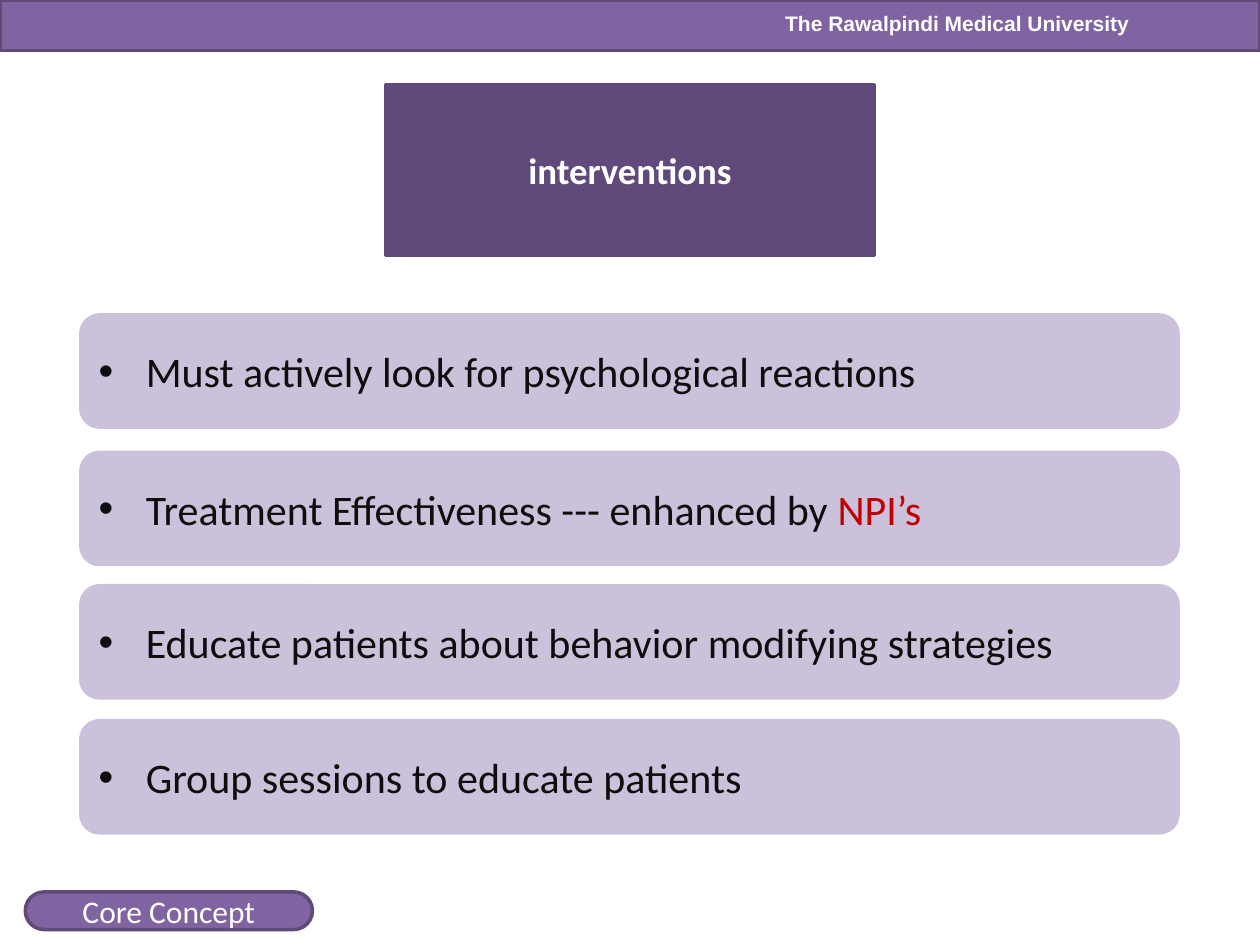
from lxml import etree
from pptx import Presentation
from pptx.dml.color import RGBColor
from pptx.enum import shapes, text
from pptx.oxml import ns
from pptx.util import Cm, Pt

HUES = {
    "bar": "8064A2",
    "edge": "5F4A78",
    "oval": "604A7B",
    "card": "CCC1DA",
    "ink": "0D0D0D",
    "red": "C00000",
    "white": "FFFFFF",
}
CARDS = [
    (6.35, [("Must actively look for psychological reactions", "ink")]),
    (9.12, [("Treatment Effectiveness --- enhanced by ", "ink"), ("NPI’s", "red")]),
    (11.81, [("Educate patients about behavior modifying strategies", "ink")]),
    (14.53, [("Group sessions to educate patients", "ink")]),
]


def hue(name):
    return RGBColor.from_string(HUES[name])


def write(shape, runs, size, font="Calibri", bold=False, bullet=False, wrap=True):
    frame = shape.text_frame
    frame.word_wrap = wrap
    frame.auto_size = text.MSO_AUTO_SIZE.NONE
    frame.vertical_anchor = text.MSO_ANCHOR.MIDDLE
    para = frame.paragraphs[0]
    para.alignment = text.PP_ALIGN.LEFT if bullet else text.PP_ALIGN.CENTER
    if bullet:
        props = para._p.get_or_add_pPr()
        props.set("marL", str(Cm(0.95)))
        props.set("indent", str(-Cm(0.95)))
        face = etree.SubElement(props, ns.qn("a:buFont"))
        face.set("typeface", "Arial")
        etree.SubElement(props, ns.qn("a:buChar")).set("char", "•")
    for words, color in runs:
        run = para.add_run()
        run.text = words
        run.font.size = Pt(size)
        run.font.name = font
        run.font.bold = bold
        run.font.color.rgb = hue(color)


def paint(shape, fill, line):
    shape.fill.solid()
    shape.fill.fore_color.rgb = hue(fill)
    shape.line.color.rgb = hue(line)
    shape.line.width = Pt(2)


def add_box(slide, kind, box, fill, line):
    shape = slide.shapes.add_shape(kind, *map(Cm, box))
    shape.shadow.inherit = False
    paint(shape, fill, line)
    return shape


def add_head(slide):
    add_box(slide, shapes.MSO_SHAPE.RECTANGLE, (0, 0, 25.4, 1.02), "bar", "edge")
    label = slide.shapes.add_textbox(Cm(15.54), Cm(0.08), Cm(7.52), Cm(0.76))
    write(label, [("The Rawalpindi Medical University", "white")], 12,
          font="Arial", bold=True, wrap=False)


def add_title(slide):
    title = slide.shapes.title
    title.left, title.top, title.width, title.height = map(Cm, (7.77, 1.7, 9.86, 3.45))
    geom = etree.SubElement(title._element.spPr, ns.qn("a:prstGeom"))
    geom.set("prst", "ellipse")
    etree.SubElement(geom, ns.qn("a:avLst"))
    paint(title, "oval", "oval")
    write(title, [("interventions", "white")], 21, bold=True)


def add_tag(slide):
    tag = add_box(slide, shapes.MSO_SHAPE.ROUNDED_RECTANGLE,
                  (0.51, 17.98, 5.79, 0.76), "bar", "edge")
    tag.adjustments[0] = 0.5
    write(tag, [("Core Concept", "white")], 18)


def add_card(slide, top, runs):
    card = add_box(slide, shapes.MSO_SHAPE.ROUNDED_RECTANGLE,
                   (1.63, top, 22.12, 2.26), "card", "card")
    write(card, runs, 24, bullet=True)


def main():
    deck = Presentation()
    deck.slide_width, deck.slide_height = Cm(25.4), Cm(19.05)
    slide = deck.slides.add_slide(deck.slide_layouts[5])
    add_head(slide)
    add_title(slide)
    add_tag(slide)
    for top, runs in CARDS:
        add_card(slide, top, runs)
    deck.save("out.pptx")


if __name__ == "__main__":
    main()
